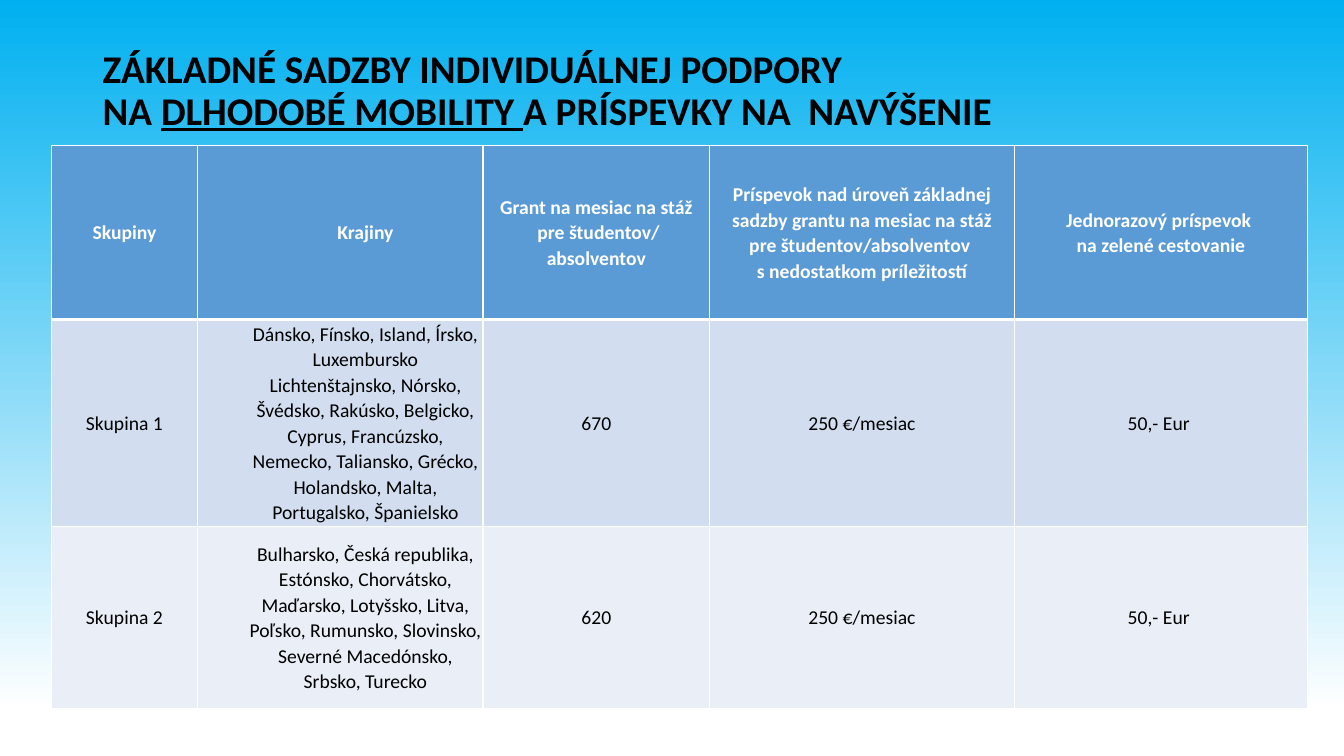
from lxml import etree
from pptx import Presentation
from pptx import util as u
from pptx.dml.color import RGBColor
from pptx.enum import text
from pptx.oxml.ns import qn

COLORS = {
    "sky": "00B0F0",
    "white": "FFFFFF",
    "black": "000000",
    "header": "5B9BD5",
    "group_1": "D2DEEF",
    "group_2": "EAEFF7",
}
FONT = "Calibri"
COLUMN_WIDTHS = [1.45, 2.83, 2.25, 3.02, 2.91]
ROW_HEIGHTS = [1.73, 2.05, 1.81]
COUNTRIES_COLUMN = 1

TITLE = [
    ["ZÁKLADNÉ SADZBY INDIVIDUÁLNEJ PODPORY"],
    ["NA ", ("DLHODOBÉ MOBILITY ", True), "A PRÍSPEVKY NA  NAVÝŠENIE"],
]
HEADER = [
    ["Skupiny"],
    ["Krajiny"],
    ["Grant na mesiac na stáž", " pre študentov/", "absolventov"],
    ["Príspevok nad úroveň základnej sadzby grantu na mesiac na stáž",
     "pre študentov/absolventov ", "s nedostatkom príležitostí"],
    ["Jednorazový príspevok ", "na zelené cestovanie"],
]
GROUPS = [
    ["Skupina 1",
     "Dánsko, Fínsko, Island, Írsko, Luxembursko Lichtenštajnsko, Nórsko, "
     "Švédsko, Rakúsko, Belgicko, Cyprus, Francúzsko, Nemecko, Taliansko, "
     "Grécko, Holandsko, Malta, Portugalsko, Španielsko",
     "670", "250 €/mesiac", "50,- Eur "],
    ["Skupina 2",
     "Bulharsko, Česká republika, Estónsko, Chorvátsko, Maďarsko, Lotyšsko, "
     "Litva, Poľsko, Rumunsko, Slovinsko, Severné Macedónsko, Srbsko, Turecko",
     "620", "250 €/mesiac", "50,- Eur "],
]


def color(name):
    return RGBColor.from_string(COLORS[name])


def write_text(frame, lines, size, font_color="black", bold=False,
               align=text.PP_ALIGN.LEFT, spacing=1.0, indent=0):
    """Write each line as a paragraph of runs; a (text, True) run is underlined."""
    frame.word_wrap = True
    for index, runs in enumerate(lines):
        paragraph = frame.paragraphs[0] if index == 0 else frame.add_paragraph()
        paragraph.alignment = align
        paragraph.line_spacing = spacing
        if indent:
            paragraph._p.get_or_add_pPr().set("marL", str(u.Inches(indent)))
        for item in runs:
            content, underline = item if isinstance(item, tuple) else (item, False)
            run = paragraph.add_run()
            run.text = content
            run.font.name = FONT
            run.font.size = u.Pt(size)
            run.font.bold = bold
            run.font.underline = underline
            run.font.color.rgb = color(font_color)


def set_background(slide):
    fill = slide.background.fill
    fill.gradient()
    fill.gradient_angle = 270
    for stop, name, position in zip(fill.gradient_stops, ("sky", "white"), (0, 0.94)):
        stop.color.rgb = color(name)
        stop.position = position


def add_title(slide):
    box = slide.shapes.add_textbox(
        u.Inches(0.92), u.Inches(0.44), u.Inches(11.5), u.Inches(0.95))
    write_text(box.text_frame, TITLE, 28, bold=True, spacing=0.9)


def set_borders(cell, sides):
    """Draw white borders; sides maps each side to its width in points."""
    properties = cell._tc.get_or_add_tcPr()
    for index, (side, width) in enumerate(sides.items()):
        line = etree.Element(qn(f"a:ln{side}"), w=str(u.Pt(width)))
        fill = etree.SubElement(line, qn("a:solidFill"))
        etree.SubElement(fill, qn("a:srgbClr"), val=COLORS["white"])
        properties.insert(index, line)


def format_cell(cell, lines, fill, top=1, bottom=1, **text_format):
    cell.fill.solid()
    cell.fill.fore_color.rgb = color(fill)
    cell.vertical_anchor = text.MSO_ANCHOR.MIDDLE
    cell.margin_left = cell.margin_right = u.Inches(0.01)
    cell.margin_top = cell.margin_bottom = u.Inches(0.01)
    set_borders(cell, {"L": 1, "R": 1, "T": top, "B": bottom})
    write_text(cell.text_frame, [[line] for line in lines], 14,
               align=text.PP_ALIGN.CENTER, spacing=1.07, **text_format)


def add_rates_table(slide):
    table = slide.shapes.add_table(
        len(ROW_HEIGHTS), len(COLUMN_WIDTHS), u.Inches(0.51), u.Inches(1.44),
        u.Inches(sum(COLUMN_WIDTHS)), u.Inches(sum(ROW_HEIGHTS))).table
    for column, width in zip(table.columns, COLUMN_WIDTHS):
        column.width = u.Inches(width)
    for row, height in zip(table.rows, ROW_HEIGHTS):
        row.height = u.Inches(height)

    for index, lines in enumerate(HEADER):
        indent = 0.5 if index == COUNTRIES_COLUMN else 0
        format_cell(table.cell(0, index), lines, "header", bottom=3,
                    font_color="white", bold=True, indent=indent)
    for number, group in enumerate(GROUPS, start=1):
        for index, value in enumerate(group):
            indent = 0.5 if index == COUNTRIES_COLUMN else 0
            format_cell(table.cell(number, index), [value], f"group_{number}",
                        top=3 if number == 1 else 1, indent=indent)


def main():
    presentation = Presentation()
    presentation.slide_width = u.Inches(13.33)
    presentation.slide_height = u.Inches(7.5)
    slide = presentation.slides.add_slide(presentation.slide_layouts[6])
    set_background(slide)
    add_title(slide)
    add_rates_table(slide)
    presentation.save("out.pptx")


if __name__ == "__main__":
    main()
